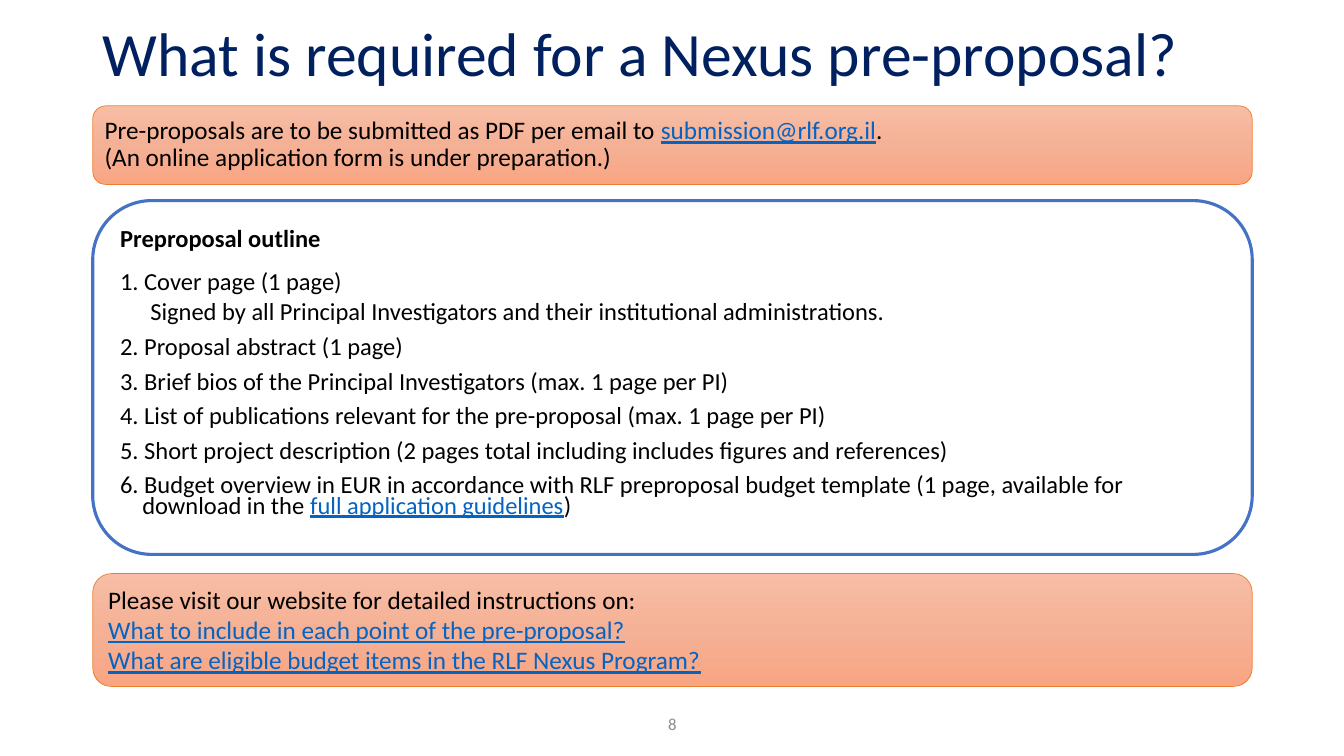
from copy import deepcopy

from lxml import etree
from pptx import Presentation
from pptx import util as u
from pptx.dml import color
from pptx.enum import shapes, text
from pptx.oxml import ns

COLORS = {
    "title": "002060", "ink": "000000", "link": "0563C1", "number": "8C8C8C",
    "paper": "FFFFFF", "outline": "4472C4", "panel_line": "ED7D31",
}
PANEL_STOPS = ("F7BDA5", "F5B196", "F8A582")
LEFT, WIDTH = 0.92, 11.5

SUBMISSION = [[
    ("Pre-proposals are to be submitted as PDF per email to ", "ink"),
    ("submission@rlf.org.il", "link"),
    (".\n(An online application form is under preparation.)", "ink"),
]]
WEBSITE = [
    [("Please visit our website for detailed instructions on:", "ink")],
    [("What to include in each point of the pre-proposal?", "link")],
    [("What are eligible budget items in the RLF Nexus Program?", "link")],
]
OUTLINE = [
    ([("Preproposal outline", "ink")], 0, 1),
    ([("1. Cover page (1 page)\nSigned by all Principal Investigators and "
       "their institutional administrations.", "ink")], 0.3, 1),
    ([("2. Proposal abstract (1 page)", "ink")], 0, 0.7),
    ([("3. Brief bios of the Principal Investigators (max. 1 page per PI)", "ink")], 0, 0.7),
    ([("4. List of publications relevant for the pre-proposal (max. 1 page per PI)", "ink")], 0, 0.7),
    ([("5. Short project description (2 pages total including includes figures "
       "and references)", "ink")], 0, 0.7),
    ([("6. Budget overview in EUR in accordance with RLF preproposal budget "
       "template (1 page, available for\ndownload in the ", "ink"),
      ("full application guidelines", "link"), (")", "ink")], 0.22, 0.7),
]


def rgb(name):
    """Return the named colour."""
    return color.RGBColor.from_string(COLORS[name])


def place(shape, box):
    """Move a shape to a box of left, top, width and height in inches."""
    shape.left, shape.top, shape.width, shape.height = map(u.Inches, box)


def add_spans(para, spans, size, bold=False):
    """Fill a paragraph with coloured runs, underlining the links."""
    for words, ink in spans:
        for index, line in enumerate(words.split("\n")):
            if index:
                para.add_line_break()
                para._p[-1].append(deepcopy(span._r.rPr))
            span = para.add_run()
            span.text = line
            span.font.name = "Calibri"
            span.font.size = u.Pt(size)
            span.font.bold = bold
            span.font.underline = ink == "link"
            span.font.color.rgb = rgb(ink)


def fill_frame(shape, paragraphs, size, anchor, align, spacing=1.0):
    """Write equally styled paragraphs into a shape."""
    frame = shape.text_frame
    frame.word_wrap = True
    frame.auto_size = text.MSO_AUTO_SIZE.NONE
    frame.vertical_anchor = anchor
    for index, spans in enumerate(paragraphs):
        para = frame.add_paragraph() if index else frame.paragraphs[0]
        para.alignment = align
        para.line_spacing = spacing
        para.space_before = u.Pt(0)
        add_spans(para, spans, size)
    return frame


def add_title(page, box):
    """Place the slide title."""
    title = page.shapes.title
    place(title, box)
    fill_frame(title, [[("What is required for a Nexus pre-proposal?", "title")]],
               44, text.MSO_ANCHOR.MIDDLE, text.PP_ALIGN.LEFT, 0.9)


def add_panel(page, box, paragraphs, anchor, spacing=1.0):
    """Add a rounded panel with a three-stop vertical gradient."""
    panel = page.shapes.add_shape(shapes.MSO_SHAPE.ROUNDED_RECTANGLE,
                                  *map(u.Inches, box))
    panel.shadow.inherit = False
    panel.fill.gradient()
    panel.fill.gradient_angle = 270
    stop_list = panel._element.spPr.find(".//" + ns.qn("a:gsLst"))
    stop_list.insert(1, deepcopy(stop_list[0]))
    for index, (stop, shade) in enumerate(zip(panel.fill.gradient_stops, PANEL_STOPS)):
        stop.position = index / 2
        stop.color.rgb = color.RGBColor.from_string(shade)
    panel.line.color.rgb = rgb("panel_line")
    panel.line.width = u.Pt(0.5)
    return fill_frame(panel, paragraphs, 18, anchor, text.PP_ALIGN.LEFT, spacing)


def add_outline(page, box):
    """Turn the body placeholder into the rounded outline list."""
    body = page.placeholders[1]
    place(body, box)
    geometry = etree.SubElement(body._element.spPr, ns.qn("a:prstGeom"), prst="roundRect")
    etree.SubElement(geometry, ns.qn("a:avLst"))
    body.fill.solid()
    body.fill.fore_color.rgb = rgb("paper")
    body.line.color.rgb = rgb("outline")
    body.line.width = u.Pt(2.25)
    frame = body.text_frame
    frame.word_wrap = True
    frame.auto_size = text.MSO_AUTO_SIZE.NONE
    frame.vertical_anchor = text.MSO_ANCHOR.TOP
    for index, (spans, indent, spacing) in enumerate(OUTLINE):
        para = frame.add_paragraph() if index else frame.paragraphs[0]
        properties = para._p.get_or_add_pPr()
        properties.set("marL", str(u.Inches(indent)))
        properties.set("indent", str(-u.Inches(indent)))
        etree.SubElement(properties, ns.qn("a:buNone"))
        para.alignment = text.PP_ALIGN.LEFT
        para.line_spacing = spacing
        para.space_before = u.Pt(10 if index else 0)
        add_spans(para, spans, 17.5, bold=index == 0)


def add_page_number(page, box):
    """Add the centred page number."""
    number = page.shapes.add_textbox(*map(u.Inches, box))
    fill_frame(number, [[("8", "number")]], 12,
               text.MSO_ANCHOR.MIDDLE, text.PP_ALIGN.CENTER)


def main():
    """Build and save the deck."""
    deck = Presentation()
    deck.slide_width, deck.slide_height = u.Inches(13.33), u.Inches(7.5)
    page = deck.slides.add_slide(deck.slide_layouts[1])
    add_title(page, (LEFT, 0.19, WIDTH, 0.75))
    add_page_number(page, (5.17, 6.98, 3, 0.4))
    add_outline(page, (LEFT, 1.99, WIDTH, 3.51))
    frame = add_panel(page, (LEFT, 1.05, WIDTH, 0.78), SUBMISSION,
                      text.MSO_ANCHOR.MIDDLE, 0.9)
    frame.margin_left = frame.margin_right = u.Inches(0.08)
    frame.margin_top = frame.margin_bottom = u.Inches(0.08)
    add_panel(page, (LEFT, 5.69, WIDTH, 1.12), WEBSITE, text.MSO_ANCHOR.TOP)
    deck.save("out.pptx")


if __name__ == "__main__":
    main()
